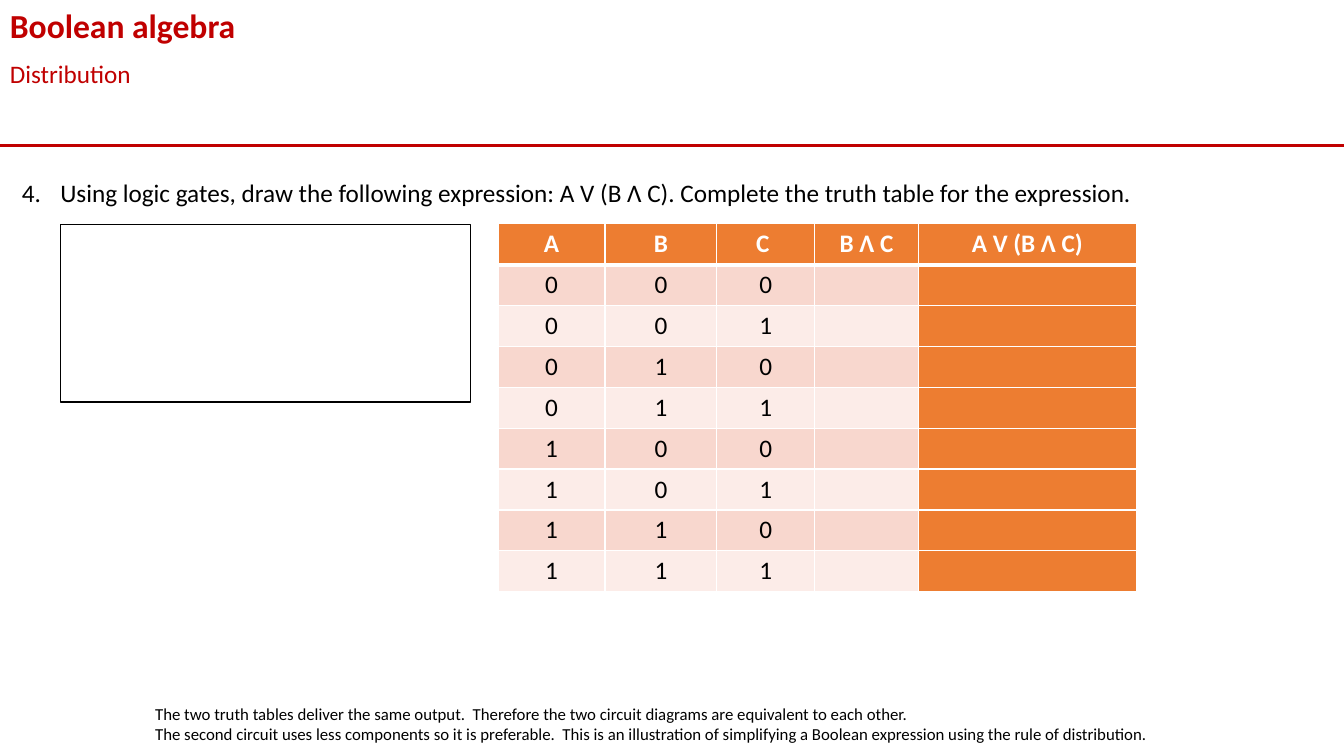
import dataclasses
import itertools

import lxml.etree
import pptx
import pptx.dml.color
import pptx.enum.shapes
import pptx.enum.text
import pptx.oxml.ns
import pptx.util

ALIGN = pptx.enum.text.PP_ALIGN
qn = pptx.oxml.ns.qn


@dataclasses.dataclass(frozen=True)
class Theme:
    font: str = "Calibri"
    red: str = "C00000"
    black: str = "000000"
    white: str = "FFFFFF"
    orange: str = "ED7D31"
    bands: tuple = ("F8D7CE", "FCECE8")
    title: int = 24
    body: int = 18
    note: int = 12


THEME = Theme()
WIDTH, HEIGHT = pptx.util.Inches(13.33), pptx.util.Inches(7.5)


@dataclasses.dataclass(frozen=True)
class Box:
    """Area on a grid of 100 columns by 100 rows across the slide."""
    x: float
    y: float
    w: float
    h: float

    def inner(self, x, y, w, h):
        return Box(self.x + x, self.y + y, w, h)

    def emu(self):
        return (round(self.x * WIDTH / 100), round(self.y * HEIGHT / 100),
                round(self.w * WIDTH / 100), round(self.h * HEIGHT / 100))


def rgb(value):
    return pptx.dml.color.RGBColor.from_string(value)


def write(p, text, size=THEME.body, color=THEME.black, bold=False, align=None):
    p.alignment = align
    r = p.add_run()
    r.text = text
    r.font.name = THEME.font
    r.font.size = pptx.util.Pt(size)
    r.font.bold = bold
    r.font.color.rgb = rgb(color)


def add_text(s, box, lines, wrap=True, **fmt):
    tf = s.shapes.add_textbox(*box.emu()).text_frame
    tf.word_wrap = wrap
    tf.auto_size = pptx.enum.text.MSO_AUTO_SIZE.SHAPE_TO_FIT_TEXT
    for i, line in enumerate(lines):
        write(tf.add_paragraph() if i else tf.paragraphs[0], line, **fmt)
    return tf


def number(p, start, indent):
    pPr = p._p.get_or_add_pPr()
    pPr.set("marL", str(indent))
    pPr.set("indent", str(-indent))
    lxml.etree.SubElement(pPr, qn("a:buFont"), typeface="+mj-lt")
    lxml.etree.SubElement(pPr, qn("a:buAutoNum"), type="arabicPeriod",
                          startAt=str(start))


def set_borders(cell, **widths):
    tcPr = cell._tc.get_or_add_tcPr()
    for side in "LRTB":
        ln = lxml.etree.SubElement(tcPr, qn("a:ln" + side),
                                   w=str(pptx.util.Pt(widths.get(side, 1))))
        fill = lxml.etree.SubElement(ln, qn("a:solidFill"))
        lxml.etree.SubElement(fill, qn("a:srgbClr"), val=THEME.white)


# Title, subtitle and the rule below them
def header(s, box, title, subtitle):
    x, y, w, h = box.emu()
    rule = s.shapes.add_connector(pptx.enum.shapes.MSO_CONNECTOR.STRAIGHT,
                                  x, y + h, x + w, y + h)
    rule.line.color.rgb = rgb(THEME.red)
    rule.line.width = pptx.util.Pt(2.25)
    lxml.etree.SubElement(rule._element.spPr, qn("a:effectLst"))
    add_text(s, box.inner(0, 7.07, box.w, 5.33), [subtitle], color=THEME.red)
    add_text(s, box.inner(0, 0, box.w, 6.67), [title], size=THEME.title,
             color=THEME.red, bold=True)


# Truth table: every input combination, result columns left to fill in
def truth_table(s, box, heads, shares, inputs):
    rows = [heads]
    for bits in itertools.product("01", repeat=inputs):
        rows.append([*bits, *[""] * (len(heads) - inputs)])
    x, y, w, h = box.emu()
    table = s.shapes.add_table(len(rows), len(heads), x, y, w, h).table
    for col, share in zip(table.columns, shares):
        col.width = round(w * share / sum(shares))
    for i, row in enumerate(rows):
        table.rows[i].height = h // len(rows)
        for j, text in enumerate(row):
            cell = table.cell(i, j)
            set_borders(cell, T=3 if i == 1 else 1, B=3 if i == 0 else 1)
            strong = i == 0 or j == len(heads) - 1
            cell.fill.solid()
            cell.fill.fore_color.rgb = rgb(
                THEME.orange if strong else THEME.bands[(i - 1) % 2])
            if text:
                write(cell.text_frame.paragraphs[0], text, bold=i == 0,
                      color=THEME.white if i == 0 else THEME.black,
                      align=ALIGN.CENTER)


# Numbered question, drawing area and truth table
def exercise(s, box, start, question, heads):
    tf = add_text(s, box.inner(0, 0, box.w, 5.33), [question])
    number(tf.paragraphs[0], start, pptx.util.Inches(0.38))
    truth_table(s, box.inner(36.16, 6.8, 47.49, 48.67), heads,
                (1.06, 1.11, 0.97, 1.03, 2.16), inputs=3)
    sp = s.shapes.add_shape(pptx.enum.shapes.MSO_SHAPE.RECTANGLE,
                            *box.inner(3.6, 6.93, 30.53, 23.47).emu())
    sp.shadow.inherit = False
    sp.fill.background()
    sp.line.color.rgb = rgb(THEME.black)
    sp.line.width = pptx.util.Pt(1)


# Closing remark
def footnote(s, box, lines):
    add_text(s, box, lines, wrap=False, size=THEME.note)


def main():
    prs = pptx.Presentation()
    prs.slide_width, prs.slide_height = WIDTH, HEIGHT
    s = prs.slides.add_slide(prs.slide_layouts[6])
    header(s, Box(0, 0, 100, 19.2), "Boolean algebra", "Distribution")
    exercise(s, Box(0.9, 22.8, 98.05, 55.47), 4,
             "Using logic gates, draw the following expression: A V (B Ʌ C). "
             "Complete the truth table for the expression.",
             ["A", "B", "C ", "B Ʌ C", "A V (B Ʌ C)"])
    footnote(s, Box(10.8, 92.4, 76.22, 6.67), [
        "The two truth tables deliver the same output.  Therefore the two "
        "circuit diagrams are equivalent to each other.",
        "The second circuit uses less components so it is preferable.  This "
        "is an illustration of simplifying a Boolean expression using the "
        "rule of distribution."])
    prs.save("out.pptx")


if __name__ == "__main__":
    main()
